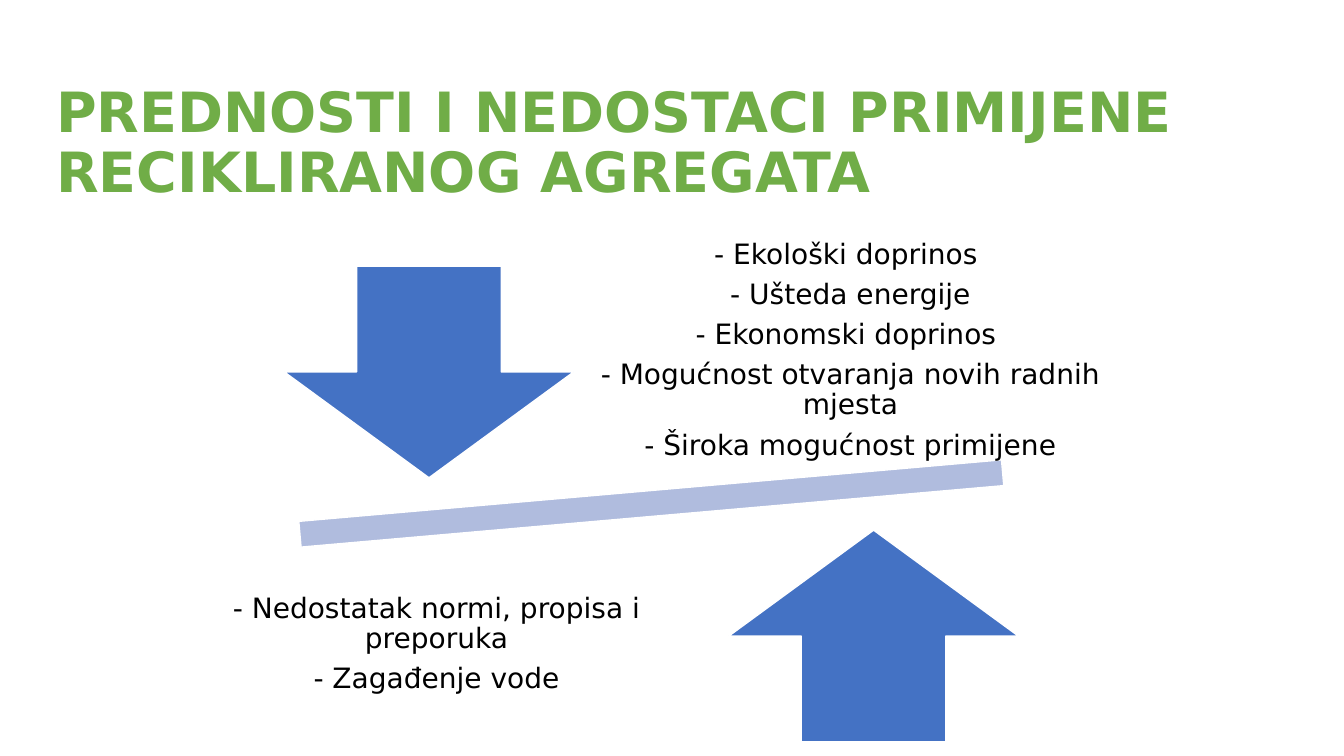
from pptx import Presentation
from pptx.dml.color import RGBColor
from pptx.enum.shapes import MSO_SHAPE
from pptx.enum.text import MSO_ANCHOR, PP_ALIGN
from pptx.util import Inches, Pt

COLORS = {
    "title": "70AD47",
    "text": "000000",
    "arrow": "4472C4",
    "beam": "B0BCDE",
    "outline": "FFFFFF",
}
FONT = "DejaVu Sans"
ADVANTAGES = [
    "- Ekološki doprinos ",
    "- Ušteda energije",
    "- Ekonomski doprinos ",
    "- Mogućnost otvaranja novih radnih mjesta",
    "- Široka mogućnost primijene",
]
DRAWBACKS = [
    "- Nedostatak normi, propisa i preporuka",
    "- Zagađenje vode",
]


def add_text(slide, box, lines, size, color, bold=False,
             align=PP_ALIGN.LEFT, space_after=0, margins=(0.1, 0.05)):
    frame = slide.shapes.add_textbox(*map(Inches, box)).text_frame
    frame.word_wrap = True
    frame.vertical_anchor = MSO_ANCHOR.MIDDLE
    frame.margin_left = frame.margin_right = Inches(margins[0])
    frame.margin_top = frame.margin_bottom = Inches(margins[1])
    frame.text = "\n".join(lines)
    for paragraph in frame.paragraphs:
        paragraph.alignment = align
        paragraph.line_spacing = 0.9
        paragraph.space_after = Pt(space_after)
        paragraph.font.name = FONT
        paragraph.font.size = Pt(size)
        paragraph.font.bold = bold
        paragraph.font.color.rgb = RGBColor.from_string(COLORS[color])


def add_figure(slide, kind, box, color, rotation=0):
    shape = slide.shapes.add_shape(kind, *map(Inches, box))
    shape.shadow.inherit = False
    shape.rotation = rotation
    shape.fill.solid()
    shape.fill.fore_color.rgb = RGBColor.from_string(COLORS[color])
    shape.line.color.rgb = RGBColor.from_string(COLORS["outline"])
    shape.line.width = Pt(1)


def add_title(slide, box):
    add_text(slide, box, ["PREDNOSTI I NEDOSTACI PRIMIJENE RECIKLIRANOG AGREGATA"],
             39.6, "title", bold=True)


def add_balance(slide, box):
    left, top, width, height = box
    arrow_width, arrow_height = 2.87, 2.1
    text_height = 2.2

    # Tilted beam between the two sides
    beam_height = 1.09
    add_figure(slide, MSO_SHAPE.MATH_MINUS,
               (left + 0.03, top + 2.07, 9.52, beam_height), "beam", rotation=355)

    # Arrows, placed symmetrically about the beam
    add_figure(slide, MSO_SHAPE.DOWN_ARROW,
               (left + 1.15, top + 0.26, arrow_width, arrow_height), "arrow")
    add_figure(slide, MSO_SHAPE.UP_ARROW,
               (left + 5.56, top + 2.88, arrow_width, arrow_height), "arrow")

    # Advantages at top right, drawbacks at bottom left
    for lines, text_left, text_top, text_width in (
        (ADVANTAGES, left + width - 5.63, top, 5.63),
        (DRAWBACKS, left, top + height - text_height, 5.32),
    ):
        add_text(slide, (text_left, text_top, text_width, text_height), lines,
                 20, "text", align=PP_ALIGN.CENTER, space_after=7,
                 margins=(0.16, 0.16))


def main():
    presentation = Presentation()
    presentation.slide_width = Inches(13.33)
    presentation.slide_height = Inches(7.5)
    slide = presentation.slides.add_slide(presentation.slide_layouts[6])
    add_title(slide, (0.46, 0.71, 12.41, 1.45))
    add_balance(slide, (1.67, 2.38, 9.58, 5.11))
    presentation.save("out.pptx")


if __name__ == "__main__":
    main()
